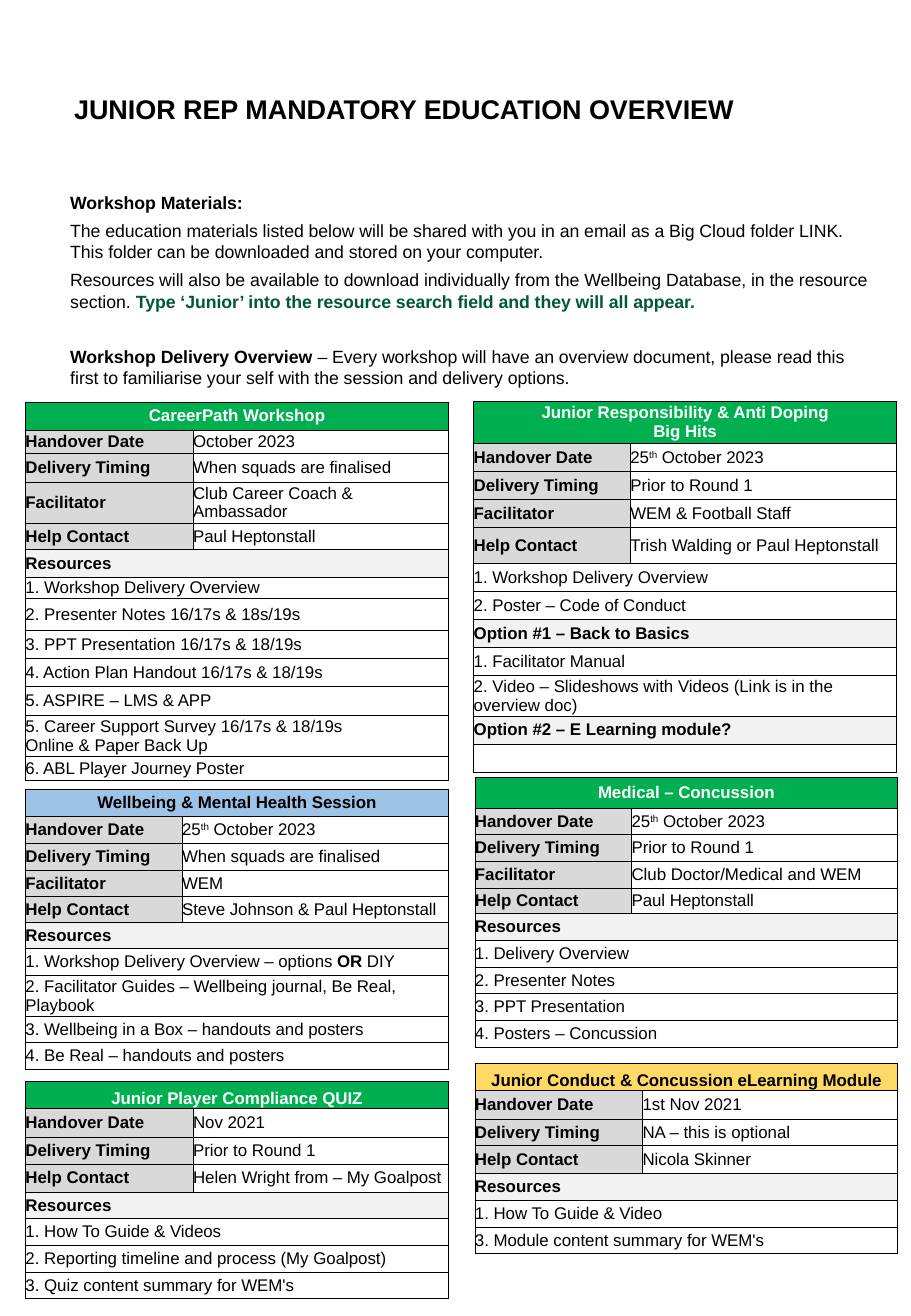
from pptx import Presentation
from pptx.dml.color import RGBColor
from pptx.enum.text import MSO_ANCHOR, PP_ALIGN
from pptx.oxml import parse_xml
from pptx.oxml.ns import nsdecls
from pptx.util import Inches, Pt

BLACK, WHITE, PINE = "000000", "FFFFFF", "00573F"
GREEN, BLUE, GOLD = "00B050", "9DC3E6", "FFD966"
GREY, PALE = "D9D9D9", "F2F2F2"
LEFT, RIGHT, WIDE = 0.21, 3.91, 3.48
DAY = ["25", ("th", "sup"), " October 2023"]


def color(code):
    return RGBColor.from_string(code)


def add_run(para, text, size, bold=False, ink=BLACK, sup=False):
    run = para.add_run()
    run.text = text
    font = run.font
    font.name, font.size, font.bold = "Arial", Pt(size), bold
    font.color.rgb = color(ink)
    if sup:
        font._element.set("baseline", "30000")


# Page title
def add_title(slide, box):
    title = slide.shapes.title
    title.left, title.top, title.width, title.height = map(Inches, box)
    title.text_frame.vertical_anchor = MSO_ANCHOR.MIDDLE
    para = title.text_frame.paragraphs[0]
    para.alignment, para.line_spacing = PP_ALIGN.LEFT, 0.9
    add_run(para, "JUNIOR REP MANDATORY EDUCATION OVERVIEW", 16, True)


# Introduction: (space before, runs of (text, bold, colour))
INTRO = [
    (0, [("Workshop Materials:", True, BLACK)]),
    (2, [("The education materials listed below will be shared with you in an "
          "email as a Big Cloud folder LINK. This folder can be downloaded and "
          "stored on your computer.", False, BLACK)]),
    (2, [("Resources will also be available to download individually from the "
          "Wellbeing Database, in the resource section. ", False, BLACK),
         ("Type ‘Junior’ into the resource search field and they will all "
          "appear.", True, PINE)]),
    (18, [("Workshop Delivery Overview ", True, BLACK),
          ("– Every workshop will have an overview document, please read this "
           "first to familiarise your self with the session and delivery "
           "options.", False, BLACK)]),
]


def add_intro(slide, box):
    frame = slide.shapes.add_textbox(*map(Inches, box)).text_frame
    frame.word_wrap = True
    for i, (gap, runs) in enumerate(INTRO):
        para = frame.add_paragraph() if i else frame.paragraphs[0]
        para.space_before, para.space_after = Pt(gap), Pt(2)
        for text, bold, ink in runs:
            add_run(para, text, 10.5, bold, ink)


# Table cells
def style_cell(cell, fill=None, anchor=MSO_ANCHOR.MIDDLE):
    cell.margin_left = cell.margin_right = 0
    cell.margin_top = cell.margin_bottom = 0
    cell.vertical_anchor = anchor
    if fill:
        cell.fill.solid()
        cell.fill.fore_color.rgb = color(fill)
    else:
        cell.fill.background()
    props = cell._tc.get_or_add_tcPr()
    for i, side in enumerate("LRTB"):
        props.insert(i, parse_xml(
            f'<a:ln{side} {nsdecls("a")} w="6350"><a:solidFill>'
            f'<a:srgbClr val="{BLACK}"/></a:solidFill></a:ln{side}>'))


def fill_cell(cell, text, bold=False, ink=BLACK, align=PP_ALIGN.LEFT):
    """Text is a string with line breaks, or a list of runs."""
    frame = cell.text_frame
    lines = [text] if isinstance(text, list) else [[t] for t in text.split("\n")]
    for i, runs in enumerate(lines):
        para = frame.add_paragraph() if i else frame.paragraphs[0]
        para.alignment = align
        for part in runs:
            word, kind = part if isinstance(part, tuple) else (part, "")
            if word:
                add_run(para, word, 10, bold or kind == "bold", ink, kind == "sup")
    if not text:
        frame.paragraphs[0]._p.append(
            parse_xml(f'<a:endParaRPr {nsdecls("a")} sz="1000"/>'))


# Workshop panel: pairs are label and value, single tuples are subheads
def add_panel(slide, box, label, sizes, name, fill, ink, rows,
              anchor=MSO_ANCHOR.MIDDLE):
    left, top, width = box
    frame = slide.shapes.add_table(
        len(sizes), 2, Inches(left), Inches(top), Inches(width),
        Inches(sum(sizes)))
    table = frame.table
    table.first_row = table.horz_banding = False
    table.columns[0].width = Inches(label)
    table.columns[1].width = Inches(width - label)
    for i, (size, row) in enumerate(zip(sizes, [name] + rows)):
        table.rows[i].height = Inches(size)
        first, second = table.cell(i, 0), table.cell(i, 1)
        if isinstance(row, tuple) and len(row) == 2:
            style_cell(first, GREY)
            style_cell(second)
            fill_cell(first, row[0], True)
            fill_cell(second, row[1])
            continue
        head = isinstance(row, tuple)
        shade = fill if i == 0 else PALE if head else None
        for cell in (first, second):
            style_cell(cell, shade, anchor if i == 0 else MSO_ANCHOR.MIDDLE)
        fill_cell(second, "")
        first.merge(second)
        if i == 0:
            fill_cell(first, name, True, ink, PP_ALIGN.CENTER)
        else:
            fill_cell(first, row[0] if head else row, head)


def facts(date, timing, staff, contact):
    pairs = [("Handover Date", date), ("Delivery Timing", timing),
             ("Facilitator", staff), ("Help Contact", contact)]
    return [pair for pair in pairs if pair[1]]


SQUADS, ROUND = "When squads are finalised", "Prior to Round 1"
QUIZ = [0.22, 0.24, 0.22, 0.23, 0.22, 0.22, 0.22]
PANELS = [
    ((LEFT, 3.31, WIDE), 1.38,
     [0.23, 0.19, 0.24, 0.24, 0.22, 0.23, 0.16, 0.27, 0.23, 0.23, 0.24, 0.32, 0.2],
     "CareerPath Workshop", GREEN, WHITE,
     facts("October 2023", SQUADS, "Club Career Coach & Ambassador",
           "Paul Heptonstall")
     + [("Resources",), "1. Workshop Delivery Overview",
        "2. Presenter Notes 16/17s & 18s/19s",
        "3. PPT Presentation 16/17s & 18/19s",
        "4. Action Plan Handout 16/17s & 18/19s", "5. ASPIRE – LMS & APP",
        "5. Career Support Survey 16/17s & 18/19s\nOnline & Paper Back Up",
        "6. ABL Player Journey Poster"]),
    ((RIGHT - 0.01, 3.3, WIDE), 1.29, [0.35] + [0.23] * 3 + [0.3] + [0.23] * 7,
     "Junior Responsibility & Anti Doping\nBig Hits", GREEN, WHITE,
     facts(DAY, ROUND, "WEM & Football Staff", "Trish Walding or Paul Heptonstall")
     + ["1. Workshop Delivery Overview", "2. Poster – Code of Conduct",
        ("Option #1 – Back to Basics",), "1. Facilitator Manual",
        "2. Video – Slideshows with Videos (Link is in the overview doc)",
        ("Option #2 – E Learning module?",), ""]),
    ((LEFT, 8.9, WIDE), 1.38, QUIZ + [0.22],
     "Junior Player Compliance QUIZ", GREEN, WHITE,
     facts("Nov 2021", ROUND, None, "Helen Wright from – My Goalpost")
     + [("Resources",), "1. How To Guide & Videos",
        "2. Reporting timeline and process (My Goalpost)",
        "3. Quiz content summary for WEM's"], MSO_ANCHOR.BOTTOM),
    ((RIGHT, 6.4, WIDE), 1.29, [0.25] + [0.22] * 3 + [0.21] + [0.22] * 5,
     "Medical – Concussion", GREEN, WHITE,
     facts(DAY, ROUND, "Club Doctor/Medical and WEM", "Paul Heptonstall")
     + [("Resources",), "1. Delivery Overview", "2. Presenter Notes",
        "3. PPT Presentation", "4. Posters – Concussion"]),
    ((LEFT, 6.5, WIDE), 1.29, [0.22] * 4 + [0.21] + [0.22] * 5,
     "Wellbeing & Mental Health Session", BLUE, BLACK,
     facts(DAY, SQUADS, "WEM", "Steve Johnson & Paul Heptonstall")
     + [("Resources",),
        ["1. Workshop Delivery Overview – options ", ("OR", "bold"), " DIY"],
        "2. Facilitator Guides – Wellbeing journal, Be Real, Playbook",
        "3. Wellbeing in a Box – handouts and posters",
        "4. Be Real – handouts and posters"]),
    ((RIGHT, 8.75, WIDE), 1.38, QUIZ,
     "Junior Conduct & Concussion eLearning Module", GOLD, BLACK,
     facts("1st Nov 2021", "NA – this is optional", None, "Nicola Skinner")
     + [("Resources",), "1. How To Guide & Video",
        "3. Module content summary for WEM's"], MSO_ANCHOR.BOTTOM),
]


def main():
    deck = Presentation()
    deck.slide_width, deck.slide_height = Inches(7.5), Inches(10.83)
    slide = deck.slides.add_slide(deck.slide_layouts[5])
    add_title(slide, (0.51, 0.58, 6.48, 0.66))
    add_intro(slide, (0.48, 1.53, 6.81, 3.56))
    for panel in PANELS:
        add_panel(slide, *panel)
    deck.save("out.pptx")


if __name__ == "__main__":
    main()
